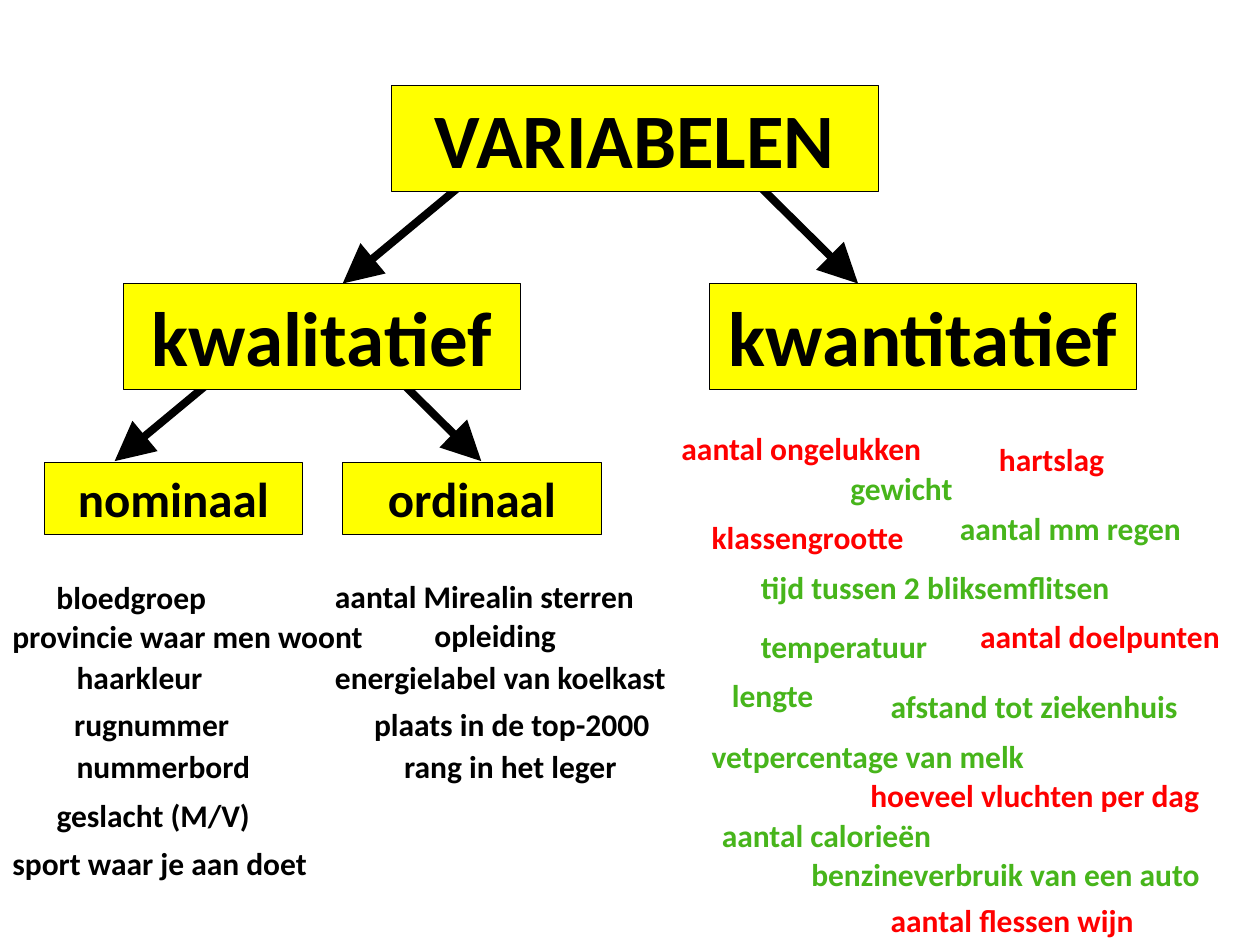
from lxml import etree
from pptx import Presentation
from pptx.dml.color import RGBColor
from pptx.enum.shapes import MSO_CONNECTOR, MSO_SHAPE
from pptx.enum.text import MSO_ANCHOR, MSO_AUTO_SIZE, PP_ALIGN
from pptx.oxml.ns import qn
from pptx.util import Inches, Pt

LINE = MSO_CONNECTOR.STRAIGHT
RECT = MSO_SHAPE.RECTANGLE
GROW, FIXED = MSO_AUTO_SIZE.SHAPE_TO_FIT_TEXT, MSO_AUTO_SIZE.NONE
TOP = MSO_ANCHOR.TOP
LEFT, MID = PP_ALIGN.LEFT, PP_ALIGN.CENTER

HUES = {"ink": "000000", "box": "FFFF00", "red": "FF0000", "green": "47B51B"}
FONT = "Calibri"

NOMINAL = [
    ("bloedgroep", 0.35, 0, 1.4),
    ("provincie waar men woont", 0, 0.31, 3),
    ("haarkleur", 0.51, 0.63, 1.21),
    ("rugnummer", 0.49, 1.01, 1.44),
    ("nummerbord", 0.51, 1.34, 1.59),
    ("geslacht (M/V)", 0.35, 1.73, 1.75),
    ("sport waar je aan doet", 0, 2.11, 2.56),
]
ORDINAL = [
    ("aantal Mirealin sterren", 0, 0, 2.62),
    ("opleiding", 0.79, 0.31, 1.17),
    ("energielabel van koelkast", 0, 0.64, 2.85),
    ("plaats in de top-2000", 0.31, 1.02, 2.41),
    ("rang in het leger", 0.55, 1.35, 1.9),
]
DISCRETE = [
    ("aantal ongelukken", 0, 0, 2.12),
    ("hartslag", 2.52, 0.08, 1.04),
    ("klassengrootte", 0.24, 0.7, 1.74),
    ("aantal doelpunten", 2.37, 1.49, 2.12),
    ("hoeveel vluchten per dag", 1.5, 2.75, 2.83),
    ("aantal flessen wijn", 1.66, 3.74, 2.15),
]
STEADY = [
    ("gewicht", 1.34, 0.31, 1.02),
    ("aantal mm regen", 2.21, 0.63, 1.97),
    ("tijd tussen 2 bliksemflitsen", 0.63, 1.1, 2.99),
    ("temperatuur", 0.63, 1.57, 1.53),
    ("lengte", 0.4, 1.96, 0.85),
    ("afstand tot ziekenhuis", 1.66, 2.04, 2.5),
    ("vetpercentage van melk", 0.24, 2.44, 2.7),
    ("aantal calorieën", 0.32, 3.07, 1.88),
    ("benzineverbruik van een auto", 1.03, 3.38, 3.38),
]


def tint(name):
    return RGBColor.from_string(HUES[name])


def write(shape, text, size=18, hue="ink", align=LEFT, wrap=False, fit=GROW):
    frame = shape.text_frame
    frame.word_wrap = wrap
    frame.auto_size = fit
    frame.vertical_anchor = TOP
    para = frame.paragraphs[0]
    para.alignment = align
    run = para.add_run()
    run.text = text
    font = run.font
    font.name, font.size, font.bold = FONT, Pt(size), True
    font.color.rgb = tint(hue)


def words(slide, left, top, items, hue="ink"):
    for text, x, y, width in items:
        box = slide.shapes.add_textbox(
            Inches(left + x), Inches(top + y), Inches(width), Inches(0.4))
        write(box, text, hue=hue)


def paint(shape, text, size, fit=GROW):
    shape.fill.solid()
    shape.fill.fore_color.rgb = tint("box")
    shape.line.color.rgb = tint("ink")
    shape.line.width = Pt(0.5)
    write(shape, text, size, align=MID, wrap=True, fit=fit)


def node(slide, left, top, width, height, text, size):
    shape = slide.shapes.add_shape(
        RECT, Inches(left), Inches(top), Inches(width), Inches(height))
    shape.shadow.inherit = False
    paint(shape, text, size)


def head(slide, left, top, width, height, text):
    title = slide.shapes.title
    title.left, title.top = Inches(left), Inches(top)
    title.width, title.height = Inches(width), Inches(height)
    paint(title, text, 44, fit=FIXED)
    slide.shapes.element.append(title.element)


def arrow(slide, x, y, across, down):
    line = slide.shapes.add_connector(
        LINE, Inches(x), Inches(y), Inches(x + across), Inches(y + down))
    line.line.color.rgb = tint("ink")
    line.line.width = Pt(4.5)
    props = line.element.spPr
    etree.SubElement(props.find(qn("a:ln")), qn("a:tailEnd"),
                     type="triangle", w="lg", len="lg")
    etree.SubElement(props, qn("a:effectLst"))


def fork(slide, left, right, top):
    arrow(slide, left, top, -0.94, 0.78)
    arrow(slide, right, top, 0.79, 0.78)


def tree(slide, left, top):
    fork(slide, left + 3.31, left + 5.67, top + 0.79)
    head(slide, left + 2.76, top, 3.86, 0.84, "VARIABELEN")
    fork(slide, left + 1.5, left + 2.68, top + 2.2)
    node(slide, left + 0.63, top + 1.57, 3.15, 0.84, "kwalitatief", 44)
    node(slide, left + 5.28, top + 1.57, 3.39, 0.84, "kwantitatief", 44)
    for step, text in enumerate(("nominaal", "ordinaal")):
        node(slide, left + 2.37 * step, top + 2.99, 2.05, 0.57, text, 28)


def main():
    deck = Presentation()
    deck.slide_width, deck.slide_height = Inches(10), Inches(7.5)
    slide = deck.slides.add_slide(deck.slide_layouts[5])
    words(slide, 0, 4.54, NOMINAL)
    words(slide, 2.56, 4.53, ORDINAL)
    words(slide, 5.31, 3.36, DISCRETE, "red")
    words(slide, 5.31, 3.36, STEADY, "green")
    tree(slide, 0.35, 0.68)
    deck.save("out.pptx")


if __name__ == "__main__":
    main()
